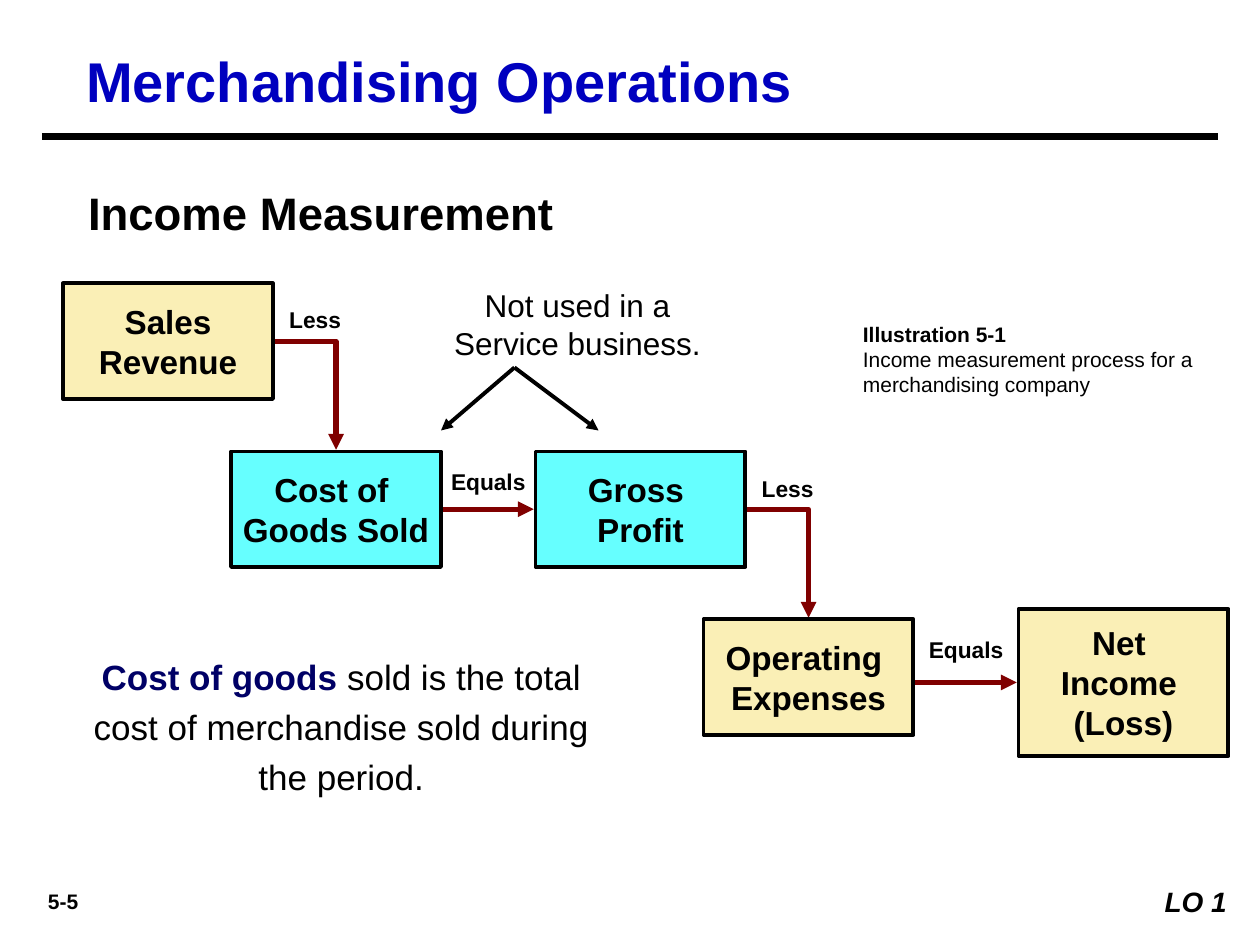
from lxml import etree
from pptx import Presentation
from pptx.dml.color import RGBColor
from pptx.enum import shapes, text
from pptx.oxml.ns import qn
from pptx.util import Pt

BLACK = RGBColor(0, 0, 0)
BLUE = RGBColor(0, 0, 0xBF)
NAVY = RGBColor(0, 0, 0x66)
MAROON = RGBColor(0x80, 0, 0)
CREAM = RGBColor(0xFA, 0xEF, 0xB6)
CYAN = RGBColor(0x66, 0xFF, 0xFF)
LEFT, MID, RIGHT = text.PP_ALIGN.LEFT, text.PP_ALIGN.CENTER, text.PP_ALIGN.RIGHT
LINE, ELBOW = shapes.MSO_CONNECTOR.STRAIGHT, shapes.MSO_CONNECTOR.ELBOW

# Content: lengths in points
TITLE = "Merchandising Operations"
BOX_W = 120
BOXES = [  # left, top, height, fill, lines
    (36, 162, 66, CREAM, ["Sales", "Revenue"]),
    (132, 258, 66, CYAN, ["Cost of ", "Goods Sold"]),
    (306, 258, 66, CYAN, ["Gross ", "Profit"]),
    (402, 354, 66, CREAM, ["Operating ", "Expenses"]),
    (582, 348, 84, CREAM, ["Net ", "Income ", "(Loss)"]),
]
LINKS = [  # kind, from, to, colour, width, arrowhead
    (LINE, (24, 78), (696, 78), BLACK, 4.5, False),
    (LINE, (294, 210), (252, 246), BLACK, 2.25, True),
    (LINE, (294, 210), (342, 246), BLACK, 2.25, True),
    (ELBOW, (157, 195), (192, 257), MAROON, 3, True),
    (ELBOW, (427, 291), (462, 353), MAROON, 3, True),
    (LINE, (253, 291), (305, 291), MAROON, 3, True),
    (LINE, (523, 390), (581, 390), MAROON, 3, True),
]
LABELS = [  # text, left, top, width
    ("Less", 150, 171, 60),
    ("Less", 420, 267.5, 60),
    ("Equals", 246, 264, 66),
    ("Equals", 522, 360, 60),
]
NOTES = [  # lines, left, top, width, height, size, bold, align
    (["Income Measurement"], 43.2, 102, 430, 42, 26, True, LEFT),
    (["Not used in a Service business."], 240, 160, 180, 50, 18, False, MID),
    (["5-5"], 6, 504, 60, 22, 12, True, MID),
]
CAPTION = ["Illustration 5-1", "Income measurement process for a merchandising company"]
TERM = "Cost of goods"
MEANING = " sold is the total cost of merchandise sold during the period."
GOAL = "LO 1"


def style(par, size, bold=False, align=LEFT, color=BLACK):
    par.alignment = align
    font = par.font
    font.name, font.size, font.bold = "Arial", Pt(size), bold
    font.color.rgb = color


def write(frame, lines, size, bold, align):
    frame.text = "\n".join(lines)
    for par in frame.paragraphs:
        style(par, size, bold, align)


def add_text(lines, x, y, w, h, size, bold=False, align=LEFT):
    frame = slide.shapes.add_textbox(Pt(x), Pt(y), Pt(w), Pt(h)).text_frame
    frame.word_wrap = True
    write(frame, lines, size, bold, align)
    return frame


def add_link(kind, start, end, color, width, arrow):
    link = slide.shapes.add_connector(kind, *map(Pt, start + end))
    link.line.color.rgb = color
    link.line.width = Pt(width)
    props = link._element.spPr
    if kind == ELBOW:  # a single right-angle bend
        props.find(qn("a:prstGeom")).set("prst", "bentConnector2")
    if arrow:
        etree.SubElement(props.find(qn("a:ln")), qn("a:tailEnd"), type="triangle")
    etree.SubElement(props, qn("a:effectLst"))


prs = Presentation()
prs.slide_width, prs.slide_height = Pt(720), Pt(540)
slide = prs.slides.add_slide(prs.slide_layouts[5])

# Title
title = slide.shapes.title
title.left, title.top, title.width, title.height = map(Pt, (42, 24, 600, 44))
title.text_frame.auto_size = text.MSO_AUTO_SIZE.NONE
write(title.text_frame, [TITLE], 32, True, LEFT)
title.text_frame.paragraphs[0].font.color.rgb = BLUE

# Notes and definition
for note in NOTES:
    add_text(*note)
frame = add_text([TERM], 42, 366, 306, 94, 20, align=MID)
par = frame.paragraphs[0]
par.line_spacing = 1.2
par.runs[0].font.bold = True
par.runs[0].font.color.rgb = NAVY
par.add_run().text = MEANING

# Illustration caption
frame = add_text(CAPTION, 486, 180, 204, 51, 12)
frame.paragraphs[0].font.bold = True

# Learning objective
frame = add_text([GOAL], 648, 502, 60, 27, 16, True, RIGHT)
frame.paragraphs[0].font.italic = True

# Flow: arrows, labels, boxes
for link in LINKS:
    add_link(*link)
for label, x, y, w in LABELS:
    add_text([label], x, y, w, 23, 13, True, MID)
for x, y, h, fill, lines in BOXES:
    box = slide.shapes.add_shape(
        shapes.MSO_SHAPE.RECTANGLE, Pt(x), Pt(y), Pt(BOX_W), Pt(h))
    box.shadow.inherit = False
    box.fill.solid()
    box.fill.fore_color.rgb = fill
    box.line.color.rgb = BLACK
    box.line.width = Pt(2.25)
    box.text_frame.word_wrap = False
    box.text_frame.vertical_anchor = text.MSO_ANCHOR.MIDDLE
    write(box.text_frame, lines, 19, True, MID)

prs.save("out.pptx")
